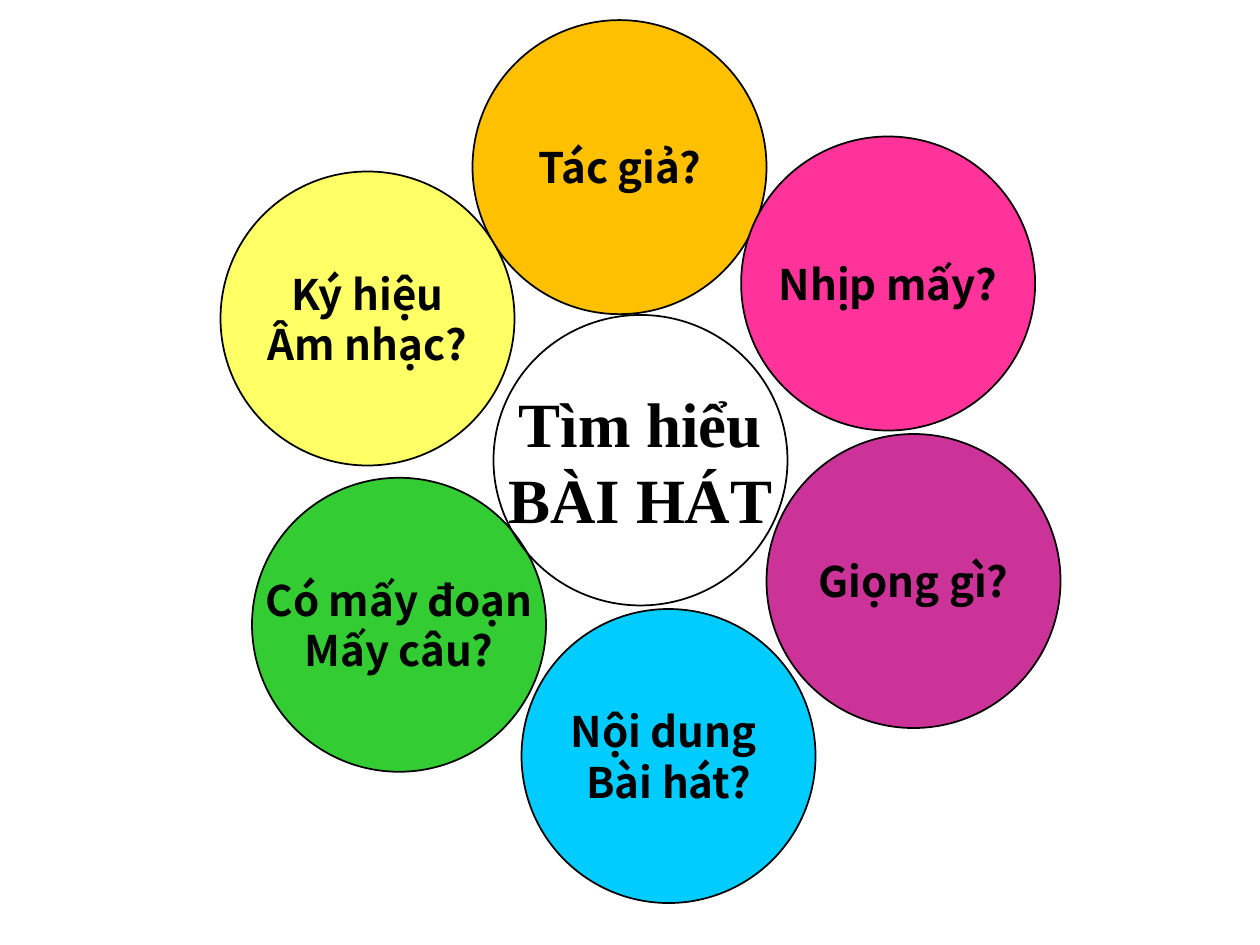
"""Build a slide of six question circles around a song-study topic."""
import pptx
import pptx.dml.color
import pptx.enum.shapes
import pptx.enum.text
import pptx.util

Pt = pptx.util.Pt
RGBColor = pptx.dml.color.RGBColor

BLACK = RGBColor(0x00, 0x00, 0x00)
ORANGE = RGBColor(0xFF, 0xC0, 0x00)
CYAN = RGBColor(0x00, 0xCC, 0xFF)
PINK = RGBColor(0xFF, 0x33, 0x99)
MAGENTA = RGBColor(0xCC, 0x33, 0x99)
YELLOW = RGBColor(0xFF, 0xFF, 0x66)
GREEN = RGBColor(0x33, 0xCC, 0x33)

DIAMETER = 168
QUESTIONS = [
    (270, 11.5, ORANGE, ["Tác giả?"]),
    (298, 348, CYAN, ["Nội dung ", "Bài hát?"]),
    (423.5, 78, PINK, ["Nhịp mấy?"]),
    (438, 248, MAGENTA, ["Giọng gì?"]),
    (126, 98, YELLOW, ["Ký hiệu", "Âm nhạc?"]),
    (144, 273, GREEN, ["Có mấy đoạn", "Mấy câu?"]),
]


def write_line(para, text, *, font, size, color=BLACK, bold=True):
    para.alignment = pptx.enum.text.PP_ALIGN.CENTER
    span = para.add_run()
    span.text = text
    span.font.name = font
    span.font.size = Pt(size)
    span.font.bold = bold
    span.font.color.rgb = color


class Painter:
    font = "Noto Sans CJK KR"
    size = 24
    outline = 1

    def __init__(self, page):
        self.page = page

    def circle(self, left, top, lines, *, fill=None, height=DIAMETER, font=None, size=None):
        shape = self.page.shapes.add_shape(
            pptx.enum.shapes.MSO_SHAPE.OVAL, Pt(left), Pt(top), Pt(DIAMETER), Pt(height))
        shape.shadow.inherit = False
        if fill is None:
            shape.fill.background()
        else:
            shape.fill.solid()
            shape.fill.fore_color.rgb = fill
        shape.line.color.rgb = BLACK
        shape.line.width = Pt(self.outline)
        box = shape.text_frame
        box.word_wrap = False
        box.vertical_anchor = pptx.enum.text.MSO_ANCHOR.MIDDLE
        for index, text in enumerate(lines):
            para = box.add_paragraph() if index else box.paragraphs[0]
            write_line(para, text, font=font or self.font, size=size or self.size)


def main():
    deck = pptx.Presentation()
    deck.slide_width, deck.slide_height = Pt(720), Pt(540)
    painter = Painter(deck.slides.add_slide(deck.slide_layouts[6]))
    for left, top, fill, lines in QUESTIONS:
        painter.circle(left, top, lines, fill=fill)
    painter.circle(282, 180, ["Tìm hiểu", "BÀI HÁT"],
                   height=166, font="Times New Roman", size=36)
    deck.save("out.pptx")


if __name__ == "__main__":
    main()
